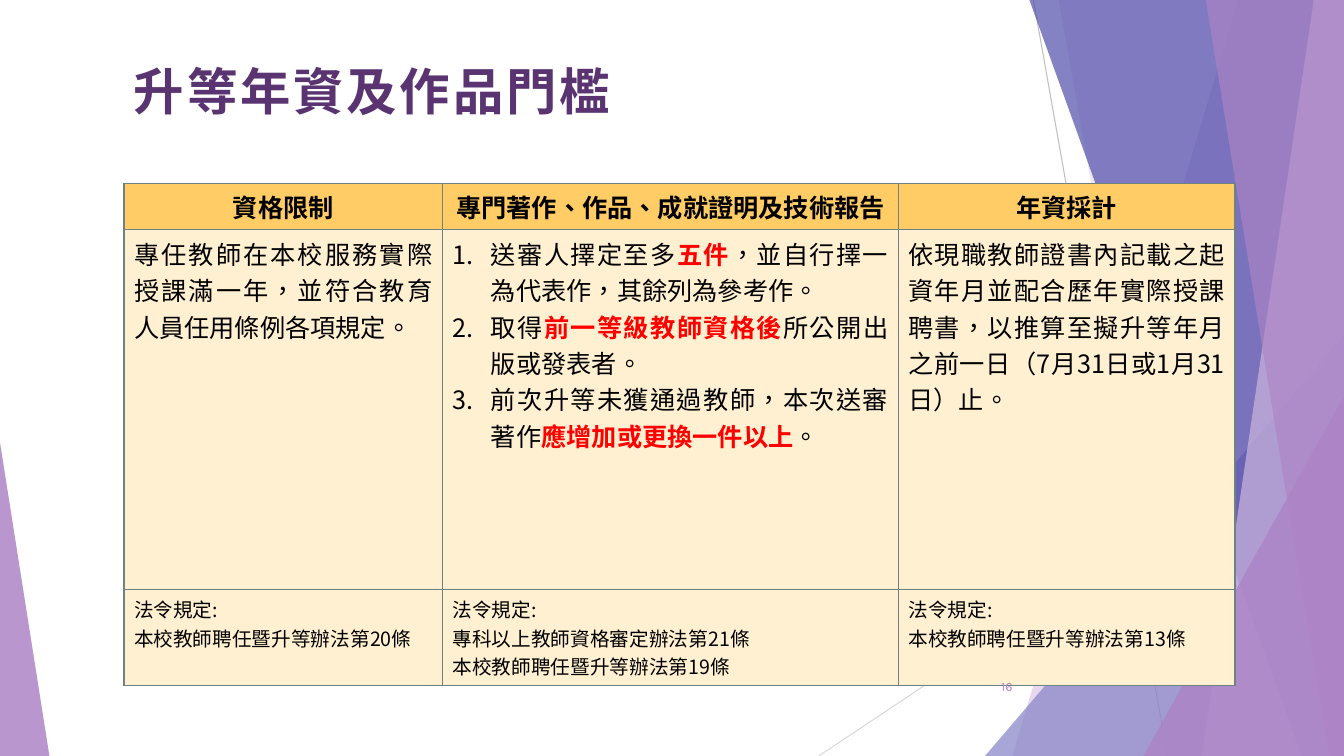
from lxml.etree import SubElement
from pptx import Presentation
from pptx.dml.color import RGBColor
from pptx.enum.shapes import MSO_CONNECTOR, MSO_SHAPE
from pptx.enum.text import MSO_ANCHOR, PP_ALIGN
from pptx.oxml.ns import qn
from pptx.util import Inches, Pt

WIDE, HIGH = Inches(13.33), Inches(7.5)
COLS, ROWS = 1333, 750
HUES = {
    "title": "5A3471", "ink": "000000", "key": "FF0000", "head": "FFCC66",
    "body": "FFF0D1", "rule": "6F8183", "lilac": "AD84C6", "pale": "CEB5DD",
    "blue": "8784C7", "deep": "524EAB", "grey": "BFBFBF", "mist": "D9D9D9",
}
CJK = "Noto Sans CJK SC"
HEADS = ["資格限制", "專門著作、作品、成就證明及技術報告", "年資採計"]
TERMS = [
    ["專任教師在本校服務實際授課滿一年，並符合教育人員任用條例各項規定。"],
    ["送審人擇定至多*五件*，並自行擇一為代表作，其餘列為參考作。",
     "取得*前一等級教師資格後*所公開出版或發表者。",
     "前次升等未獲通過教師，本次送審著作*應增加或更換一件以上*。"],
    ["依現職教師證書內記載之起資年月並配合歷年實際授課聘書，"
     "以推算至擬升等年月之前一日（7月31日或1月31日）止。"],
]
LAWS = [
    ["本校教師聘任暨升等辦法第20條"],
    ["專科以上教師資格審定辦法第21條", "本校教師聘任暨升等辦法第19條"],
    ["本校教師聘任暨升等辦法第13條"],
]


def grid(*units):
    return [round(unit * WIDE / COLS) for unit in units]


def color(name):
    return RGBColor.from_string(HUES[name])


def write(frame, lines, size=18, font=CJK, hue="ink", bold=False,
          align=None, space=None, track=0, count=False):
    frame.word_wrap = True
    for i, line in enumerate(lines):
        para = frame.paragraphs[0] if i == 0 else frame.add_paragraph()
        para.alignment = align
        para.line_spacing = space
        if count:
            props = para._p.get_or_add_pPr()
            props.set("marL", str(Inches(0.38)))
            props.set("indent", str(-Inches(0.38)))
            SubElement(props, qn("a:buAutoNum"), type="arabicPeriod")
        for j, part in enumerate(line.split("*")):
            key = j % 2 == 1
            run = para.add_run()
            run.text = part
            run.font.size = Pt(size)
            run.font.bold = bold or key
            run.font.color.rgb = color("key" if key else hue)
            run.font.name = font
            props = run._r.get_or_add_rPr()
            props.set("lang", "zh-TW")
            if track:
                props.set("spc", str(track * 100))
            SubElement(props, qn("a:ea"), typeface=font)


def label(slide, box, text, anchor=MSO_ANCHOR.TOP, **form):
    frame = slide.shapes.add_textbox(*grid(*box)).text_frame
    frame.vertical_anchor = anchor
    write(frame, [text], **form)


def tint(shape, hue, alpha):
    shape.shadow.inherit = False
    shape.fill.solid()
    shape.fill.fore_color.rgb = color(hue)
    mark = shape._element.spPr.find(".//" + qn("a:srgbClr"))
    SubElement(mark, qn("a:alpha"), val=str(alpha * 1000))
    shape.line.fill.background()


def wire(slide, ends, hue):
    line = slide.shapes.add_connector(MSO_CONNECTOR.STRAIGHT, *grid(*ends))
    line.line.color.rgb = color(hue)
    line.line.width = Pt(0.75)
    SubElement(line._element.spPr, qn("a:effectLst"))


def band(slide, box, top, base, hue, alpha):
    x, y, w, h = box
    pen = slide.shapes.build_freeform(*grid(x + top, y))
    spots = [(x + w, y), (x + w, y + h), (x + base, y + h)]
    pen.add_line_segments([grid(*spot) for spot in spots], close=True)
    tint(pen.convert_to_shape(), hue, alpha)


def wedge(slide, box, left, wide, high, peak, hue, alpha):
    x, y, w, h = box
    shape = slide.shapes.add_shape(
        MSO_SHAPE.ISOSCELES_TRIANGLE,
        *grid(x + left, y + h - high, wide, high))
    shape.adjustments[0] = peak
    tint(shape, hue, alpha)


def decor(slide, box):
    x, y, w, h = box
    wire(slide, (x + 1025, y, x + 1158, y + h), "grey")
    wire(slide, (x + w, y + 403, x + 812, y + h), "mist")
    band(slide, box, 1228, 1004, "lilac", 30)
    band(slide, box, 1050, 1183, "lilac", 20)
    wedge(slide, box, 977, 356, 417, 1, "blue", 72)
    band(slide, box, 1021, 1291, "deep", 70)
    band(slide, box, 1303, 1192, "pale", 70)
    band(slide, box, 1196, 1318, "lilac", 65)
    wedge(slide, box, 1134, 199, 357, 1, "lilac", 80)
    wedge(slide, box, 0, 49, 311, 0, "lilac", 85)


def edge(cell):
    props = cell._tc.get_or_add_tcPr()
    for side in ("lnL", "lnR", "lnT", "lnB"):
        line = SubElement(props, qn("a:" + side), w=str(Pt(1)))
        fill = SubElement(line, qn("a:solidFill"))
        SubElement(fill, qn("a:srgbClr"), val=HUES["rule"])


def rules(slide, box):
    table = slide.shapes.add_table(3, 3, *grid(*box)).table
    table.first_row = table.horz_banding = False
    for col, wide in zip(table.columns, grid(316, 452, 334)):
        col.width = wide
    for row, high in zip(table.rows, grid(46, 357, box[3] - 46 - 357)):
        row.height = high
    for i in range(3):
        forms = [
            ([HEADS[i]], dict(bold=True, align=PP_ALIGN.CENTER)),
            (TERMS[i], dict(align=PP_ALIGN.JUSTIFY, count=len(TERMS[i]) > 1)),
            (["法令規定:"] + LAWS[i], dict(size=14)),
        ]
        for j, (lines, form) in enumerate(forms):
            cell = table.cell(j, i)
            edge(cell)
            cell.fill.solid()
            cell.fill.fore_color.rgb = color("body" if j else "head")
            write(cell.text_frame, lines, **form)


def main():
    deck = Presentation()
    deck.slide_width, deck.slide_height = WIDE, HIGH
    slide = deck.slides.add_slide(deck.slide_layouts[6])
    decor(slide, (0, 0, COLS, ROWS))
    label(slide, (123, 62, 1199, 79), "升等年資及作品門檻", size=36,
          hue="title", bold=True, space=0.9, track=2)
    rules(slide, (123, 182, 1102, 498))
    label(slide, (939, 661, 75, 40), "16", MSO_ANCHOR.MIDDLE, size=9,
          font="Karla", hue="lilac", align=PP_ALIGN.RIGHT)
    deck.save("out.pptx")


if __name__ == "__main__":
    main()
